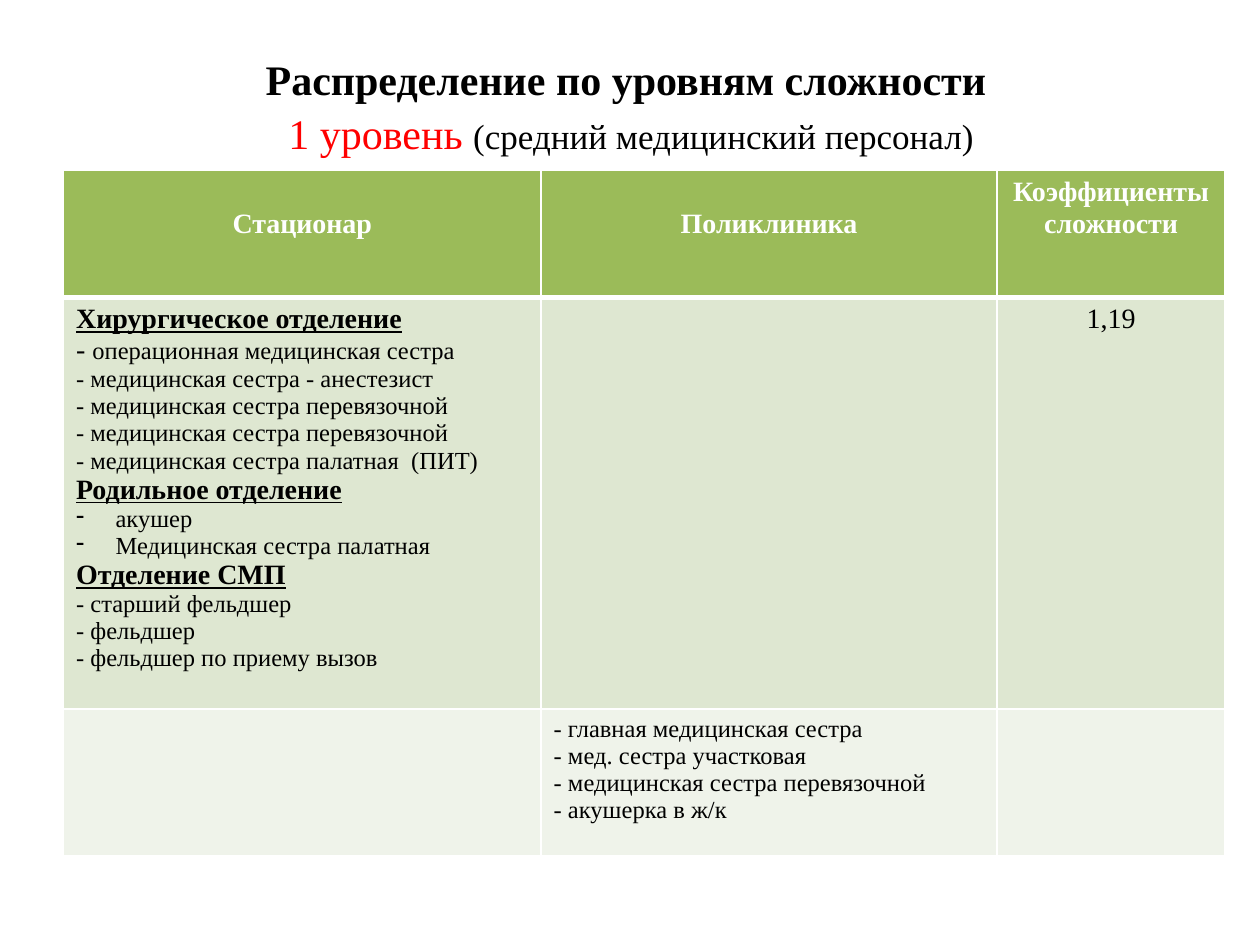
import pptx
import pptx.util
import pptx.dml.color
import pptx.enum.text
import pptx.oxml
import pptx.oxml.ns
from lxml import etree

Pt = pptx.util.Pt
RGBColor = pptx.dml.color.RGBColor
PP_ALIGN = pptx.enum.text.PP_ALIGN
qn = pptx.oxml.ns.qn

BLACK = RGBColor(0x00, 0x00, 0x00)
WHITE = RGBColor(0xFF, 0xFF, 0xFF)
RED = RGBColor(0xFF, 0x00, 0x00)
GREEN = RGBColor(0x9B, 0xBB, 0x59)
BAND_DARK = RGBColor(0xDE, 0xE7, 0xD1)
BAND_LIGHT = RGBColor(0xEF, 0xF3, 0xEA)
FONT = "Times New Roman"

# Content: each run is (text, size, bold, colour)
TITLE_LINES = [
    [("Распределение по уровням сложности ", 24, True, BLACK)],
    [("1 уровень ", 24, False, RED),
     ("(средний медицинский персонал)", 20, False, BLACK)],
]
HEADERS = ["Стационар", "Поликлиника", "Коэффициенты сложности"]
# Each paragraph is (style, text)
HOSPITAL = [
    ("heading", "Хирургическое отделение"),
    ("first", "операционная медицинская сестра"),
    ("item", "- медицинская сестра - анестезист"),
    ("item", "- медицинская сестра перевязочной"),
    ("item", "- медицинская сестра перевязочной"),
    ("item", "- медицинская сестра палатная  (ПИТ)"),
    ("heading", "Родильное отделение"),
    ("bullet", "акушер"),
    ("bullet", "Медицинская сестра палатная"),
    ("heading", "Отделение СМП"),
    ("item", "- старший фельдшер"),
    ("item", "- фельдшер"),
    ("item", "- фельдшер по приему вызов"),
]
CLINIC = [
    ("item", "- главная медицинская сестра"),
    ("item", "- мед. сестра участковая"),
    ("item", "- медицинская сестра перевязочной"),
    ("item", "- акушерка в ж/к"),
]
ROWS = [
    [[("header", text)] for text in HEADERS],
    [HOSPITAL, [], [("value", "1,19")]],
    [[], CLINIC, []],
]
ROW_FILLS = [GREEN, BAND_DARK, BAND_LIGHT]
COLUMN_WIDTHS = [272.9, 260.6, 130.3]
ROW_HEIGHTS = [72.5, 233, 84]
HEADER_TOP_MARGINS = [21.6, 21.6, 3.6]


def set_font(font, size, bold, color):
    font.name = FONT
    font.size = Pt(size)
    font.bold = bold
    font.color.rgb = color


def write_cell(cell, paragraphs):
    for number, (style, text) in enumerate(paragraphs):
        frame = cell.text_frame
        paragraph = frame.add_paragraph() if number else frame.paragraphs[0]
        if style == "bullet":
            properties = paragraph._p.get_or_add_pPr()
            properties.set("marL", str(Pt(22.5)))
            properties.set("indent", str(-Pt(22.5)))
            etree.SubElement(properties, qn("a:buChar")).set("char", "-")
        if style in ("header", "value"):
            paragraph.alignment = PP_ALIGN.CENTER
        if style == "first":
            dash = paragraph.add_run()
            dash.text = "- "
            dash.font.size = Pt(16)
        paragraph.add_run().text = text
        set_font(paragraph.font,
                 16 if style in ("header", "heading", "value") else 14,
                 style in ("header", "heading"),
                 WHITE if style == "header" else BLACK)
        if style == "heading":
            paragraph.font.underline = True


def set_borders(cell, widths):
    properties = cell._tc.get_or_add_tcPr()
    for position, (side, width) in enumerate(widths.items()):
        line = pptx.oxml.parse_xml(
            f'<a:{side} xmlns:a="http://schemas.openxmlformats.org/drawingml/2006/main" '
            f'w="{Pt(width)}"><a:solidFill><a:srgbClr val="{WHITE}"/></a:solidFill></a:{side}>')
        properties.insert(position, line)


presentation = pptx.Presentation()
presentation.slide_width, presentation.slide_height = Pt(720), Pt(540)
slide = presentation.slides.add_slide(presentation.slide_layouts[6])

# Title
title = slide.shapes.add_textbox(Pt(36.7), Pt(20.2), Pt(648), Pt(78.5)).text_frame
title.word_wrap = True
title.vertical_anchor = pptx.enum.text.MSO_ANCHOR.MIDDLE
heading = title.paragraphs[0]
heading.alignment = PP_ALIGN.CENTER
heading.line_spacing = 1.07
heading.font.size = Pt(24)
for number, runs in enumerate(TITLE_LINES):
    if number:
        heading.add_line_break()
    for text, size, bold, color in runs:
        run = heading.add_run()
        run.text = text
        set_font(run.font, size, bold, color)

# Table of staff by department
staff = slide.shapes.add_table(
    len(ROWS), len(HEADERS), Pt(36.3), Pt(97.5),
    Pt(sum(COLUMN_WIDTHS)), Pt(sum(ROW_HEIGHTS))).table
for column, width in zip(staff.columns, COLUMN_WIDTHS):
    column.width = Pt(width)
for row, height in zip(staff.rows, ROW_HEIGHTS):
    row.height = Pt(height)
for r, (contents, fill) in enumerate(zip(ROWS, ROW_FILLS)):
    for c, paragraphs in enumerate(contents):
        cell = staff.cell(r, c)
        cell.fill.solid()
        cell.fill.fore_color.rgb = fill
        if r == 0:
            cell.margin_top = Pt(HEADER_TOP_MARGINS[c])
        set_borders(cell, {"lnL": 1, "lnR": 1,
                           "lnT": 3 if r == 1 else 1,
                           "lnB": 3 if r == 0 else 1})
        write_cell(cell, paragraphs)

presentation.save("out.pptx")
